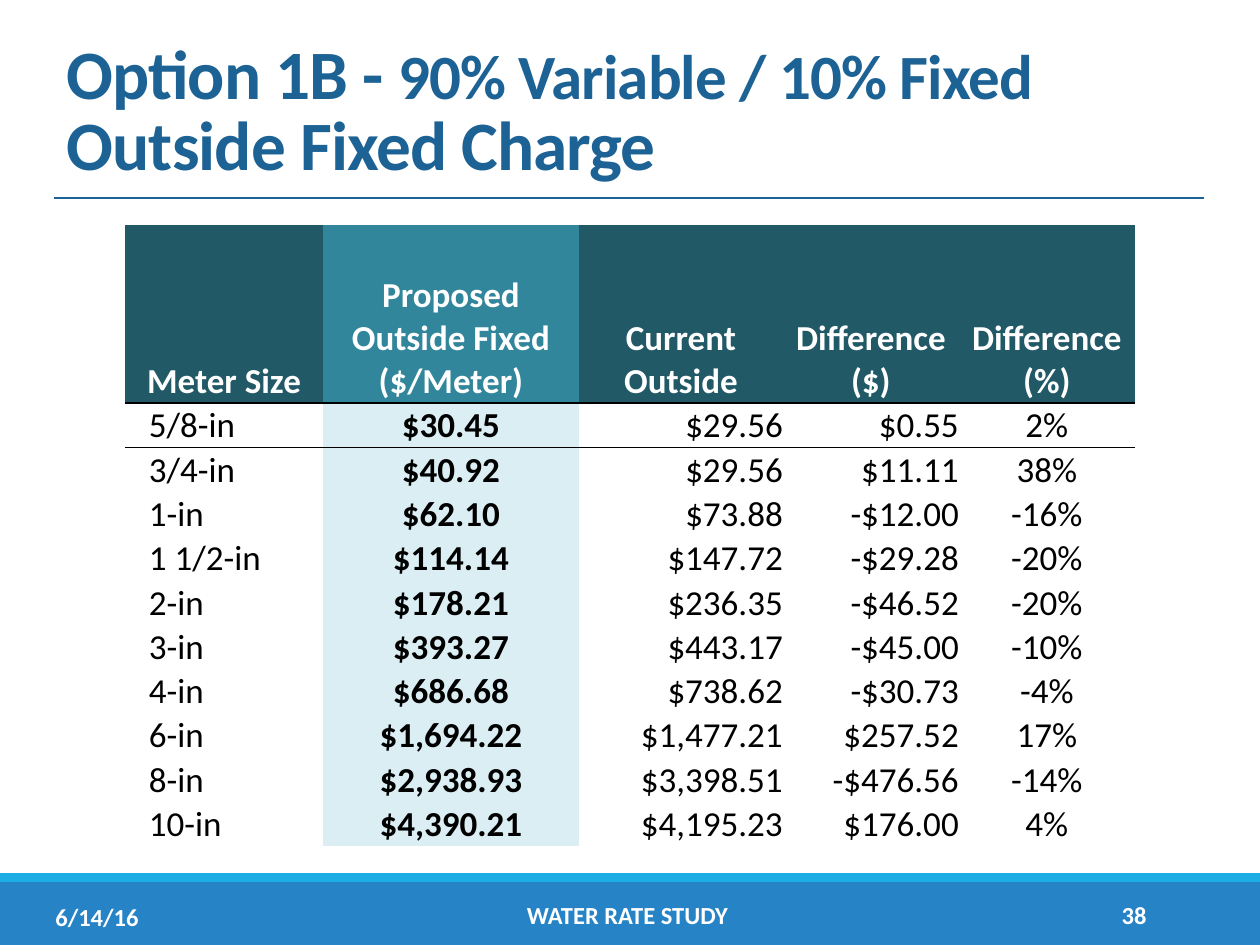
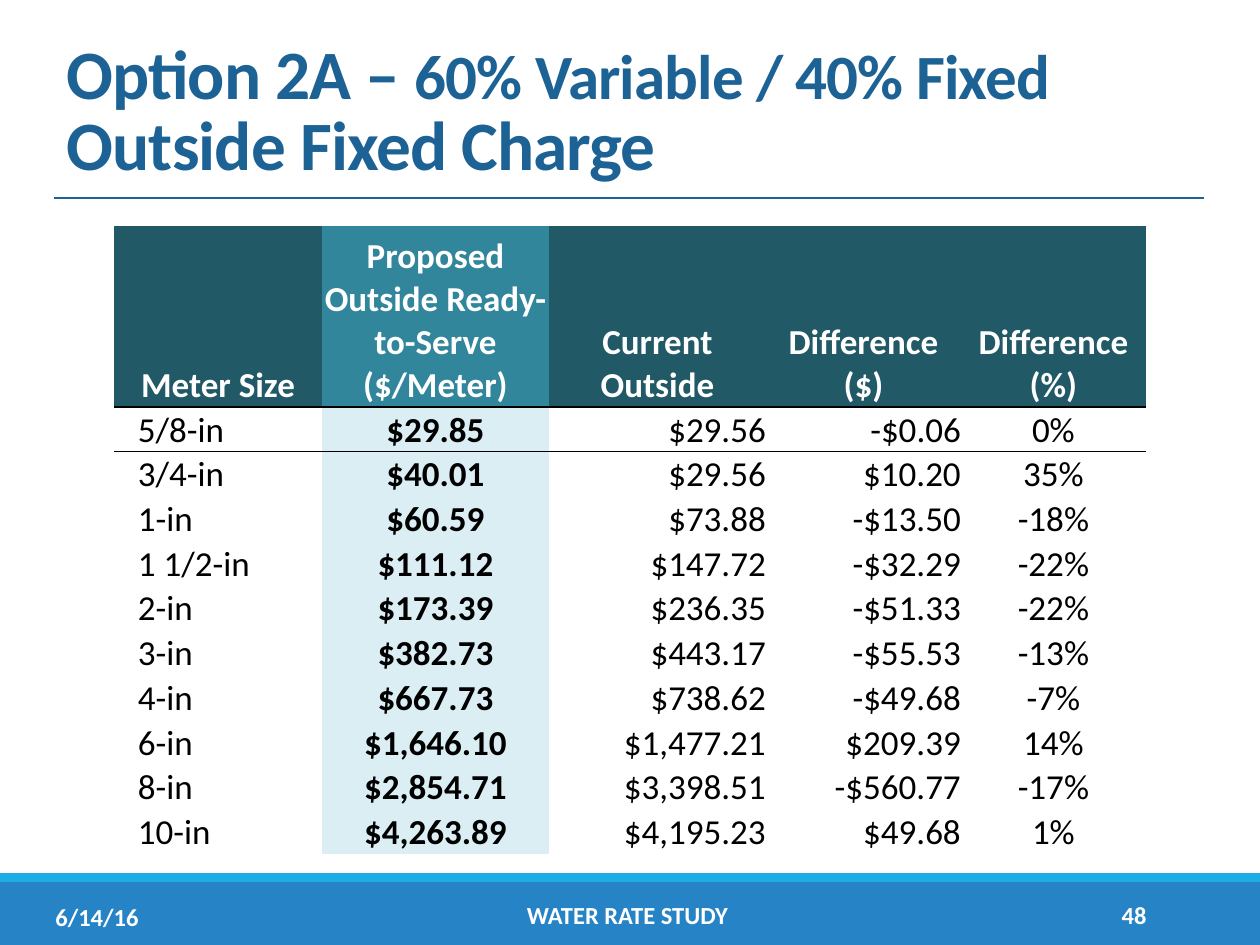
from dataclasses import dataclass

from lxml import etree
from pptx import Presentation
from pptx.dml.color import RGBColor
from pptx.enum.shapes import MSO_CONNECTOR, MSO_SHAPE
from pptx.enum.text import MSO_ANCHOR, MSO_AUTO_SIZE, PP_ALIGN
from pptx.oxml.ns import qn
from pptx.util import Emu, Pt

LEFT, CENTER, RIGHT = PP_ALIGN.LEFT, PP_ALIGN.CENTER, PP_ALIGN.RIGHT
MIDDLE, BOTTOM = MSO_ANCHOR.MIDDLE, MSO_ANCHOR.BOTTOM
RECTANGLE = MSO_SHAPE.RECTANGLE
STRAIGHT = MSO_CONNECTOR.STRAIGHT
NO_AUTOFIT = MSO_AUTO_SIZE.NONE

PX = 914400 / 126
PAGE_WIDTH, PAGE_HEIGHT = 1260, 945
TITLE_ONLY_LAYOUT = 5
PLAIN_TABLE_STYLE = "{2D5ABB26-0587-4C30-8999-92F81FD0307C}"


def px(length):
    return Emu(round(length * PX))


@dataclass(frozen=True)
class Theme:
    font: str = "Calibri"
    title: str = "1D6294"
    band: str = "2683C6"
    band_edge: str = "1CADE4"
    header: str = "215967"
    header_accent: str = "31869B"
    column_accent: str = "DAEEF3"
    light: str = "FFFFFF"
    dark: str = "000000"
    title_size: float = 39.6
    subtitle_size: float = 36
    table_size: float = 20
    footer_size: float = 14


def write(para, text, *, font, size, color, bold=False, tracking=None):
    """Append one formatted span; tracking is in hundredths of a point."""
    span = para.add_run()
    span.text = text
    span.font.name = font
    span.font.size = Pt(size)
    span.font.bold = bold
    span.font.color.rgb = RGBColor.from_string(color)
    if tracking is not None:
        span._r.get_or_add_rPr().set("spc", str(tracking))


def add_border(cell, side, color):
    """Draw a 1 pt border; call before filling the cell to keep XML order."""
    line = etree.Element(qn(f"a:{side}"), w=str(Pt(1)))
    fill = etree.SubElement(line, qn("a:solidFill"))
    etree.SubElement(fill, qn("a:srgbClr"), val=color)
    cell._tc.get_or_add_tcPr().insert(0, line)


class RateDeck:
    ALIGNMENTS = (LEFT, CENTER, RIGHT, RIGHT, CENTER)
    ACCENT_COLUMN = 1
    METER_INDENT = 24

    def __init__(self, theme):
        self.theme = theme
        self.deck = Presentation()
        self.deck.slide_width = px(PAGE_WIDTH)
        self.deck.slide_height = px(PAGE_HEIGHT)
        self.page = None

    def add_page(self, number, option, split):
        layout = self.deck.slide_layouts[TITLE_ONLY_LAYOUT]
        self.page = self.deck.slides.add_slide(layout)
        self.add_band(882, 63, self.theme.band)
        self.add_band(873, 9, self.theme.band_edge)
        self.add_rule(54, 1204, 198)
        self.add_title(option, split)
        self.add_footer("6/14/16", 43, 892, 140, LEFT)
        self.add_footer("WATER RATE STUDY", 183, 890, 889, CENTER)
        self.add_footer(number, 1072, 890, 87, RIGHT)

    def add_band(self, top, height, color):
        band = self.page.shapes.add_shape(
            RECTANGLE, 0, px(top), px(PAGE_WIDTH), px(height))
        band.shadow.inherit = False
        band.fill.solid()
        band.fill.fore_color.rgb = RGBColor.from_string(color)
        band.line.fill.background()

    def add_rule(self, left, right, top):
        rule = self.page.shapes.add_connector(
            STRAIGHT, px(left), px(top), px(right), px(top))
        rule.line.color.rgb = RGBColor.from_string(self.theme.title)
        rule.line.width = Pt(1.5)
        etree.SubElement(rule._element.spPr, qn("a:effectLst"))

    def add_title(self, option, split):
        title = self.page.shapes.title
        title.left, title.top = px(54), px(39)
        title.width, title.height = px(1018), px(152)
        frame = title.text_frame
        frame.auto_size = NO_AUTOFIT
        frame.vertical_anchor = BOTTOM
        para = frame.paragraphs[0]
        para.alignment = LEFT
        para.line_spacing = 0.85
        style = dict(font=self.theme.font, color=self.theme.title,
                     bold=True, tracking=-50)
        write(para, option, size=self.theme.title_size, **style)
        write(para, split, size=self.theme.subtitle_size, **style)
        para.add_line_break()
        write(para, "Outside Fixed Charge", size=self.theme.title_size, **style)

    def add_footer(self, text, left, top, width, alignment):
        box = self.page.shapes.add_textbox(px(left), px(top), px(width), px(50))
        frame = box.text_frame
        frame.word_wrap = True
        frame.vertical_anchor = MIDDLE
        para = frame.paragraphs[0]
        para.alignment = alignment
        write(para, text, font=self.theme.font, size=self.theme.footer_size,
              color=self.theme.light, bold=True)

    def add_rate_table(self, rows, left, top, widths, header_height, body_height):
        """The first row is the header; the others share body_height equally."""
        frame = self.page.shapes.add_table(
            len(rows), len(widths), px(left), px(top),
            px(sum(widths)), px(header_height + body_height))
        table = frame.table
        table.first_row = table.horz_banding = False
        table._tbl.tblPr.find(qn("a:tableStyleId")).text = PLAIN_TABLE_STYLE
        for column, width in zip(table.columns, widths):
            column.width = px(width)
        for row in table.rows:
            row.height = px(body_height / (len(rows) - 1))
        table.rows[0].height = px(header_height)
        for row_index, values in enumerate(rows):
            for column_index, value in enumerate(values):
                cell = table.cell(row_index, column_index)
                self.format_cell(cell, value, row_index, column_index)

    def format_cell(self, cell, value, row_index, column_index):
        theme = self.theme
        is_header = row_index == 0
        is_accent = column_index == self.ACCENT_COLUMN
        cell.margin_left = cell.margin_right = 0
        cell.margin_top = cell.margin_bottom = 0
        if column_index == 0 and not is_header:
            cell.margin_left = px(self.METER_INDENT)
        cell.vertical_anchor = BOTTOM
        if row_index < 2:
            add_border(cell, "lnB" if is_header else "lnT", theme.dark)
        if is_header:
            fill = theme.header_accent if is_accent else theme.header
        else:
            fill = theme.column_accent if is_accent else None
        if fill:
            cell.fill.solid()
            cell.fill.fore_color.rgb = RGBColor.from_string(fill)
        else:
            cell.fill.background()
        para = cell.text_frame.paragraphs[0]
        para.alignment = CENTER if is_header else self.ALIGNMENTS[column_index]
        write(para, value, font=theme.font, size=theme.table_size,
              color=theme.light if is_header else theme.dark,
              bold=is_header or is_accent)


METER_SIZES = ("5/8-in", "3/4-in", "1-in", "1 1/2-in", "2-in",
               "3-in", "4-in", "6-in", "8-in", "10-in")
CURRENT_CHARGES = ("$29.56", "$29.56", "$73.88", "$147.72", "$236.35",
                   "$443.17", "$738.62", "$1,477.21", "$3,398.51", "$4,195.23")

OPTION_1B = (
    ("$30.45", "$0.55", "2%"),
    ("$40.92", "$11.11", "38%"),
    ("$62.10", "-$12.00", "-16%"),
    ("$114.14", "-$29.28", "-20%"),
    ("$178.21", "-$46.52", "-20%"),
    ("$393.27", "-$45.00", "-10%"),
    ("$686.68", "-$30.73", "-4%"),
    ("$1,694.22", "$257.52", "17%"),
    ("$2,938.93", "-$476.56", "-14%"),
    ("$4,390.21", "$176.00", "4%"),
)
OPTION_2A = (
    ("$29.85", "-$0.06", "0%"),
    ("$40.01", "$10.20", "35%"),
    ("$60.59", "-$13.50", "-18%"),
    ("$111.12", "-$32.29", "-22%"),
    ("$173.39", "-$51.33", "-22%"),
    ("$382.73", "-$55.53", "-13%"),
    ("$667.73", "-$49.68", "-7%"),
    ("$1,646.10", "$209.39", "14%"),
    ("$2,854.71", "-$560.77", "-17%"),
    ("$4,263.89", "$49.68", "1%"),
)


def rate_rows(charge_name, option):
    """Join an option's charges with the meter sizes and current charges."""
    header = ("Meter Size", f"Proposed Outside {charge_name} ($/Meter)",
              "Current Outside", "Difference ($)", "Difference (%)")
    body = [(meter, proposed, current, change, percent)
            for meter, current, (proposed, change, percent)
            in zip(METER_SIZES, CURRENT_CHARGES, option)]
    return [header, *body]


def main():
    rates = RateDeck(Theme())

    rates.add_page("38", "Option 1B - ", "90% Variable / 10% Fixed")
    rates.add_rate_table(
        rate_rows("Fixed", OPTION_1B), left=125, top=225,
        widths=(198, 256, 204, 176, 176), header_height=178, body_height=443)

    rates.add_page("48", "Option 2A – ", "60% Variable / 40% Fixed")
    rates.add_rate_table(
        rate_rows("Ready-to-Serve", OPTION_2A), left=114, top=226,
        widths=(208, 227, 217, 195, 185), header_height=181, body_height=447)

    rates.deck.save("out.pptx")


if __name__ == "__main__":
    main()
